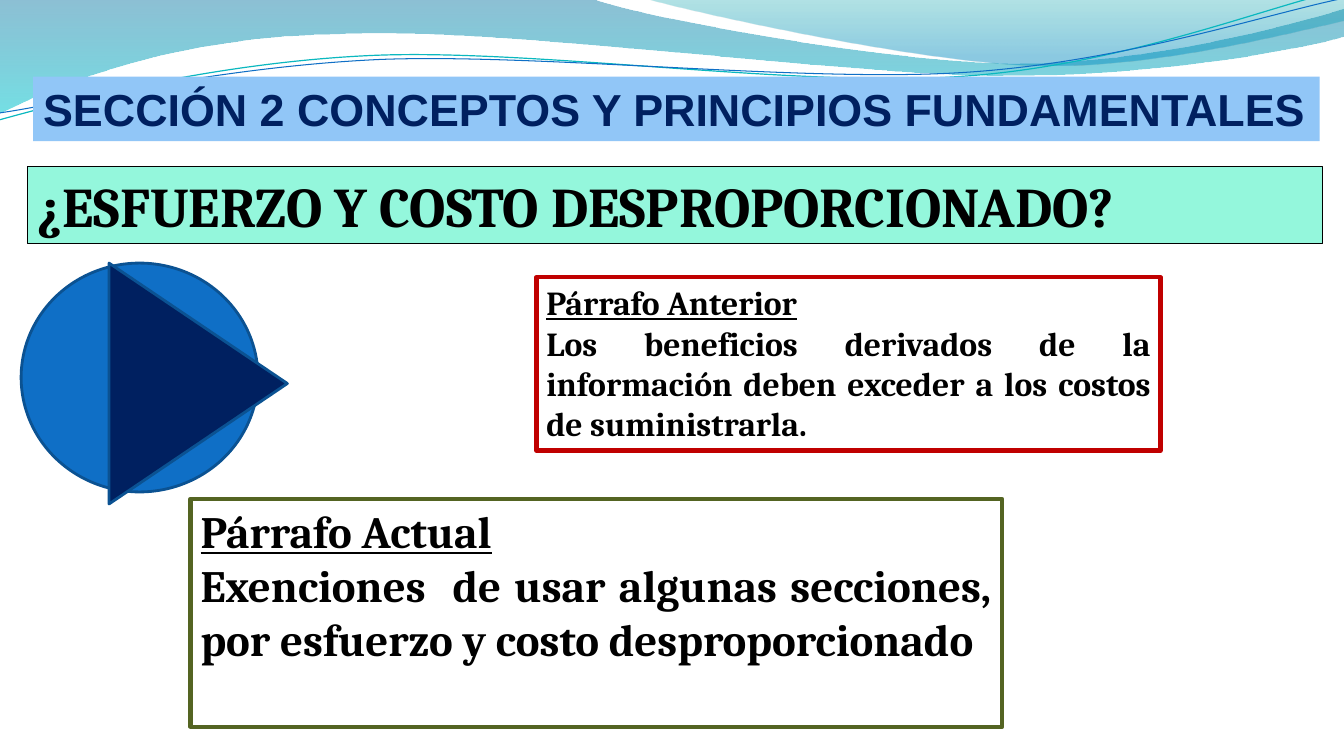
from lxml.etree import SubElement
from pptx import Presentation
from pptx.dml.color import RGBColor
from pptx.enum.shapes import MSO_SHAPE
from pptx.enum.text import MSO_ANCHOR, MSO_AUTO_SIZE, PP_ALIGN
from pptx.oxml.ns import qn
from pptx.util import Inches, Pt

WIDTH, HEIGHT = 13.33, 7.5

# Each wave starts at a point; 2 numbers are a line, 6 are a Bézier curve
BROAD_WAVE = [
    (0, 0), (5.87, -0.01),
    (6.34, 0.17, 8.85, 0.63, 10.11, 0.63), (11.38, 0.63, 12.78, 0.26, 13.33, 0.09),
    (13.35, 0.36),
    (13.11, 0.44, 11.6, 0.76, 9.94, 0.75), (8.29, 0.75, 5.09, 0.28, 3.43, 0.34),
    (1.72, 0.36, 0.61, 0.83, -0.01, 1.13), (0, 0),
]
RIGHT_WAVE = [
    (6.39, -0.01), (6.79, 0.11, 9.09, 0.62, 10.25, 0.65),
    (11.41, 0.69, 12.82, 0.32, 13.33, 0.21), (13.33, 0), (6.39, -0.01),
]
TEAL_STRAND = [
    (-0.01, 1.19), (0.64, 1.01, 2.11, 0.62, 3.69, 0.55),
    (5.27, 0.48, 7.9, 0.87, 9.5, 0.76), (11.1, 0.66, 12.52, 0.08, 13.31, -0.1),
]
BLUE_STRAND = [
    (0, 1.12), (0.63, 1.03, 2.18, 0.66, 3.78, 0.59),
    (5.37, 0.53, 7.96, 0.82, 9.55, 0.72), (11.15, 0.62, 12.55, 0.14, 13.34, -0.02),
]


def color(hex_code):
    return RGBColor.from_string(hex_code)


def paint(sp, fill=None, line=None, line_width=1):
    sp.shadow.inherit = False
    if fill:
        sp.fill.solid()
        sp.fill.fore_color.rgb = color(fill)
    else:
        sp.fill.background()
    if line:
        sp.line.color.rgb = color(line)
        sp.line.width = Pt(line_width)
    else:
        sp.line.fill.background()


def paint_gradient(sp, stops):
    """Fill from top to bottom with (position, colour, opacity %) stops."""
    sp.fill.gradient()
    sp.fill.gradient_angle = 270
    for stop, (position, hex_code, _) in zip(sp.fill.gradient_stops, stops):
        stop.position = position
        stop.color.rgb = color(hex_code)
    codes = sp.element.spPr.iter(qn("a:srgbClr"))
    for code, (_, _, opacity) in zip(codes, stops):
        SubElement(code, qn("a:alpha")).set("val", str(opacity * 1000))


def add_shape(s, kind, box, **style):
    sp = s.shapes.add_shape(kind, *map(Inches, box))
    paint(sp, **style)
    return sp


def add_text(p, text, size, font="Cambria", hex_code="000000", underline=False):
    r = p.add_run()
    r.text = text
    r.font.size, r.font.name = Pt(size), font
    r.font.bold, r.font.underline = True, underline
    r.font.color.rgb = color(hex_code)


def bend(sp, steps):
    """Join the three line segments of each curved step into one Bézier curve."""
    segments = iter(list(sp.element.spPr.iter(qn("a:lnTo"))))
    for step in steps[1:]:
        first = next(segments)
        if len(step) == 6:
            first.tag = qn("a:cubicBezTo")
            for _ in range(2):
                control = next(segments)
                control.getparent().remove(control)
                first.extend(list(control))


def add_wave(owner, origin, steps, **style):
    points = [(Inches(origin[0] + step[i]), Inches(origin[1] + step[i + 1]))
              for step in steps for i in range(0, len(step), 2)]
    builder = owner.shapes.build_freeform(*points[0])
    builder.add_line_segments(points[1:], close=steps[0] == steps[-1])
    sp = builder.convert_to_shape()
    bend(sp, steps)
    paint(sp, **style)
    return sp


def header_waves(s, origin):
    for steps, stops in (
        (BROAD_WAVE, [(0, "0074A1", 45), (1, "00C6CF", 55)]),
        (RIGHT_WAVE, [(0, "00A1A9", 30), (0.8, "008BBF", 45)]),
    ):
        paint_gradient(add_wave(s, origin, steps), stops)
    strands = s.shapes.add_group_shape()
    add_wave(strands, origin, TEAL_STRAND, line="0AB8BF", line_width=0.85)
    add_wave(strands, origin, BLUE_STRAND, line="0F6FC6", line_width=0.75)


def play_circle(s, box):
    x, y, w, h = box
    add_shape(s, MSO_SHAPE.OVAL, (x, y, w * 0.89, h * 0.95),
              fill="0F6FC6", line="0B5292", line_width=2)


def play_arrow(s, box):
    # The triangle is turned a quarter, so its sides swap around its centre
    x, y, w, h = box
    across = w * 0.67
    center_x, center_y = x + w - across / 2, y + h / 2
    sp = add_shape(s, MSO_SHAPE.ISOSCELES_TRIANGLE,
                   (center_x - h / 2, center_y - across / 2, h, across),
                   fill="002060", line="0B5292", line_width=2)
    sp.rotation = 90


def add_text_box(s, box, wrap=True, **style):
    sp = add_shape(s, MSO_SHAPE.RECTANGLE, box, **style)
    tf = sp.text_frame
    tf.word_wrap, tf.vertical_anchor = wrap, MSO_ANCHOR.TOP
    tf.auto_size = MSO_AUTO_SIZE.SHAPE_TO_FIT_TEXT
    return tf


def banner(s, box, text, fill, line=None, wrap=True, **text_format):
    tf = add_text_box(s, box, wrap, fill=fill, line=line, line_width=0.75)
    p = tf.paragraphs[0]
    p.alignment = PP_ALIGN.LEFT
    add_text(p, text, **text_format)


def paragraph_box(s, box, heading, body, size, line):
    tf = add_text_box(s, box, line=line, line_width=3)
    for p, text, underline in ((tf.paragraphs[0], heading, True),
                               (tf.add_paragraph(), body, False)):
        p.alignment = PP_ALIGN.JUSTIFY
        add_text(p, text, size, underline=underline)


def main():
    prs = Presentation()
    prs.slide_width, prs.slide_height = Inches(WIDTH), Inches(HEIGHT)
    s = prs.slides.add_slide(prs.slide_layouts[6])
    emblem = (0.21, 2.61, 2.64, 2.39)

    header_waves(s, (0, 0))
    play_circle(s, emblem)
    # Titles
    banner(s, (0.33, 0.76, 12.76, 0.64), "SECCIÓN 2 CONCEPTOS Y PRINCIPIOS FUNDAMENTALES",
           fill="91C6F7", wrap=False, size=32, font="Arial", hex_code="002060")
    banner(s, (0.27, 1.65, 12.85, 0.77), "¿ESFUERZO Y COSTO DESPROPORCIONADO?",
           fill="94F7DC", line="000000", size=40)
    # The two paragraphs compared, with the arrow over the first
    paragraph_box(s, (1.89, 4.95, 8.05, 2.26), "Párrafo Actual",
                  "Exenciones  de usar algunas secciones, por esfuerzo y costo "
                  "desproporcionado", 32, "546422")
    play_arrow(s, emblem)
    paragraph_box(s, (5.32, 2.75, 6.19, 1.72), "Párrafo Anterior",
                  "Los beneficios derivados de la información deben exceder a los "
                  "costos de suministrarla.", 24, "C00000")
    prs.save("out.pptx")


if __name__ == "__main__":
    main()
